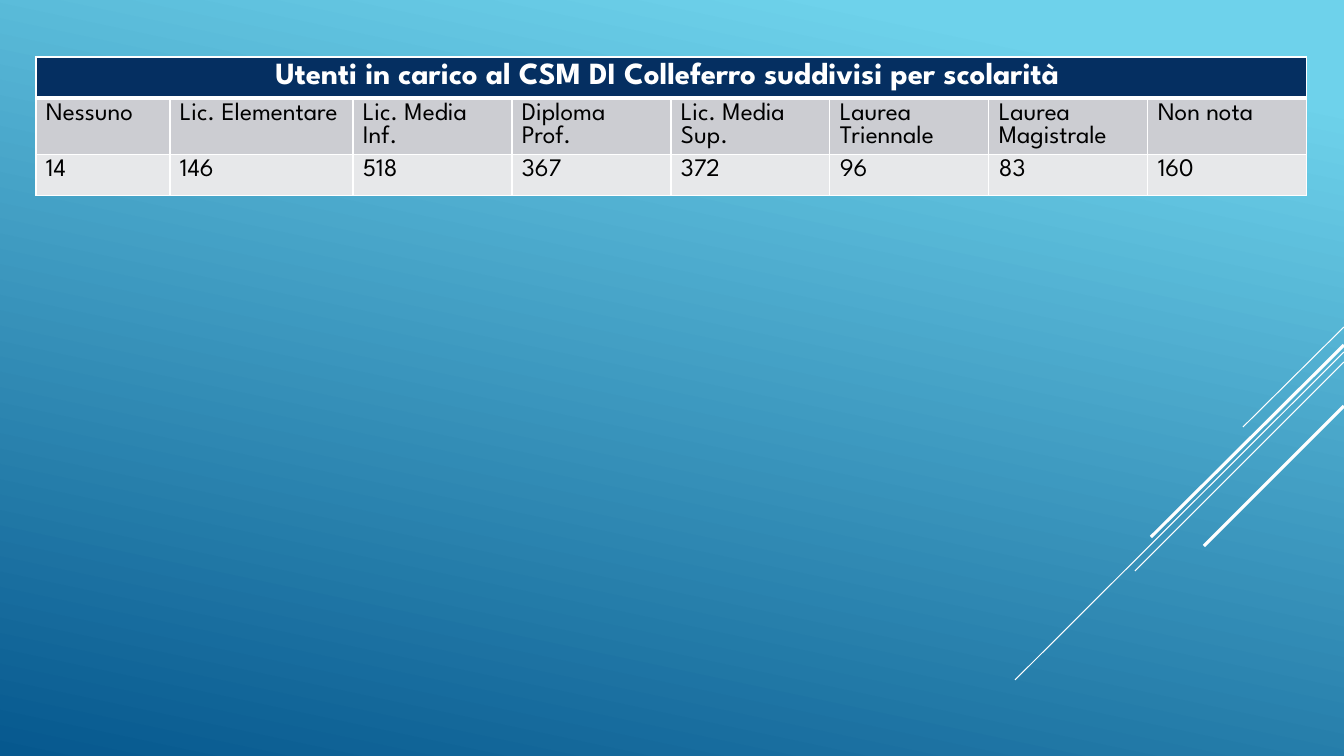
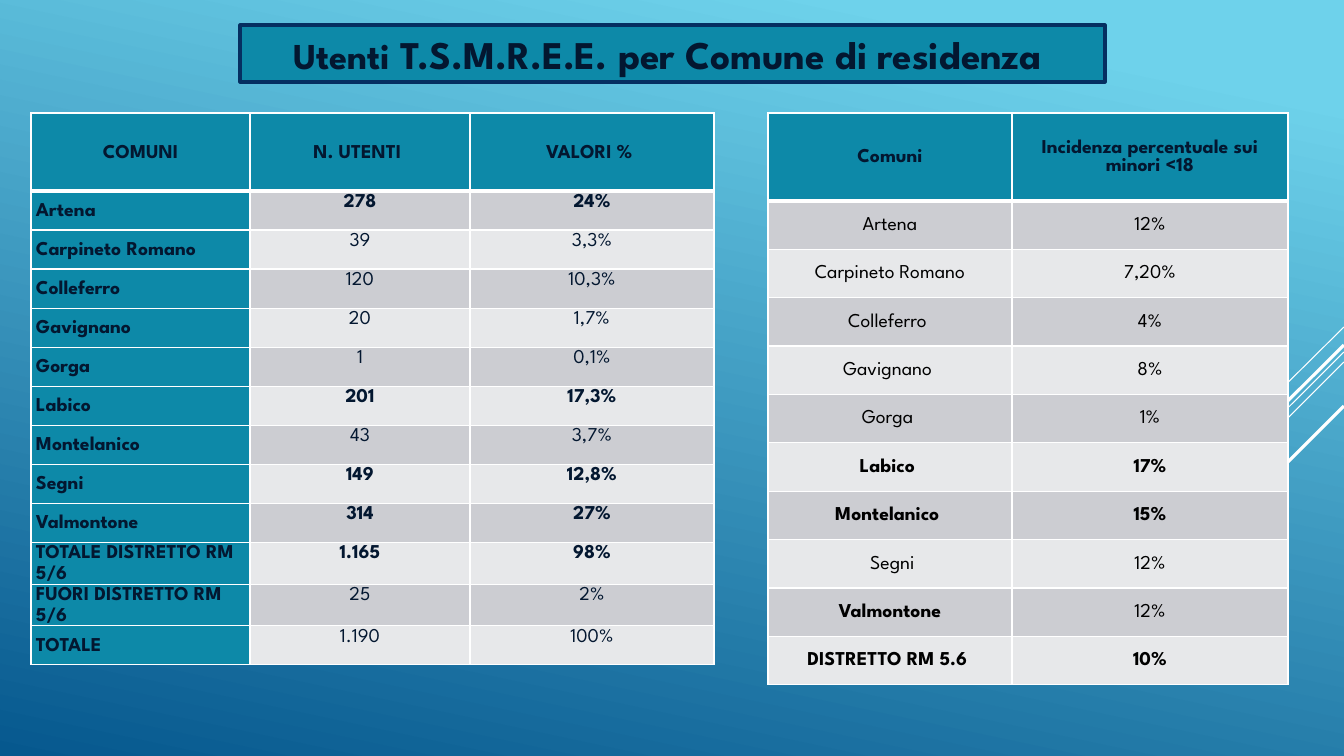
from lxml import etree
from pptx import Presentation
from pptx.dml.color import RGBColor
from pptx.enum.shapes import MSO_CONNECTOR
from pptx.enum.text import MSO_ANCHOR, MSO_AUTO_SIZE, PP_ALIGN
from pptx.oxml import parse_xml
from pptx.oxml.ns import nsdecls, qn
from pptx.util import Emu, Pt

# Shared look
SLIDE_WIDTH, SLIDE_HEIGHT = 1344, 756
FONT = "League Spartan"
WHITE, BLACK, INK = "FFFFFF", "000000", "031730"
NAVY, TEAL = "052F61", "0D89A8"
BANDS = ("CCCDD2", "E7E8EA")
GRADIENT = ((0.1, "6ED2EB"), (1, "06588E"))
GRADIENT_ANGLE = 258

# Diagonal lines from the right edge: start y, end x, end y, width in points
DIAGONALS = [
    (327, 1243, 427, 0.75),
    (352, 1015, 680, 0.75),
    (362, 1135, 571, 0.75),
    (345, 1151, 537, 2.25),
    (406, 1204, 546, 2.25),
]

# Content: a leading * marks a bold value
EDUCATION = [
    ["Utenti in carico al CSM DI Colleferro suddivisi per scolarità "] + [""] * 7,
    ["Nessuno", "Lic. Elementare", "Lic. Media Inf.", "Diploma Prof.",
     "Lic. Media Sup.", "Laurea Triennale", "Laurea Magistrale", "Non nota"],
    ["14", "146", "518", "367", "372", "96", "83", "160"],
]
USERS = [
    ("COMUNI", "N. UTENTI ", "VALORI % "),
    ("*Artena", "*278", "*24%"),
    ("*Carpineto Romano", "39", "3,3%"),
    ("*Colleferro", "120", "10,3%"),
    ("*Gavignano", "20", "1,7%"),
    ("*Gorga", "1", "0,1%"),
    ("*Labico", "*201", "*17,3%"),
    ("*Montelanico", "43", "3,7%"),
    ("*Segni", "*149", "*12,8%"),
    ("*Valmontone", "*314", "*27%"),
    ("*TOTALE DISTRETTO RM 5/6", "*1.165", "*98%"),
    ("*FUORI DISTRETTO RM 5/6", "25", "2%"),
    ("*TOTALE", "1.190", "100%"),
]
INCIDENCE = [
    ("Comuni", "Incidenza percentuale sui minori <18"),
    ("Artena", "12%"),
    ("Carpineto Romano", "7,20%"),
    ("Colleferro ", "4%"),
    ("Gavignano ", "8%"),
    ("Gorga ", "1%"),
    ("*Labico ", "*17%"),
    ("*Montelanico ", "*15%"),
    (" Segni", "12%"),
    ("*Valmontone", "12%"),
    ("*DISTRETTO RM 5.6 ", "*10%"),
]
TITLE_RUNS = [("Utenti", 26), (" T.S.M.R.E.E. per Comune di residenza ", 28)]


def px(value):
    return Emu(round(value * 12192000 / SLIDE_WIDTH))


def color(value):
    return RGBColor.from_string(value)


def style_font(font, size, ink, bold):
    font.name, font.size, font.bold = FONT, Pt(size), bold
    font.color.rgb = color(ink)


def set_borders(cell, top, bottom):
    properties = cell._tc.get_or_add_tcPr()
    for side, width in (("L", 1), ("R", 1), ("T", top), ("B", bottom)):
        properties.append(parse_xml(
            f'<a:ln{side} {nsdecls("a")} w="{Pt(width)}"><a:solidFill>'
            f'<a:srgbClr val="{WHITE}"/></a:solidFill></a:ln{side}>'))


def add_grid(slide, rows, left, top, widths, header_height, height, *, size=14,
             header_size=14, header_fill=TEAL, header_ink=INK, body_ink=BLACK,
             margins=(10, 5, 10, 5), body_align=PP_ALIGN.CENTER,
             body_anchor=MSO_ANCHOR.MIDDLE, name_column=False,
             line_spacing=None, space_after=None):
    """Table with a header row, banded body rows and white borders."""
    table = slide.shapes.add_table(len(rows), len(widths), px(left), px(top),
                                   px(sum(widths)), px(height)).table
    table.horz_banding = False
    for column, width in zip(table.columns, widths):
        column.width = px(width)
    body_height = (height - header_height) / (len(rows) - 1)
    for i, values in enumerate(rows):
        header = i == 0
        table.rows[i].height = px(header_height if header else body_height)
        for j, value in enumerate(values):
            cell = table.cell(i, j)
            name = name_column and j == 0 and not header
            set_borders(cell, 3 if i == 1 else 1, 3 if header else 1)
            cell.fill.solid()
            cell.fill.fore_color.rgb = color(
                header_fill if header else TEAL if name else BANDS[(i - 1) % 2])
            (cell.margin_left, cell.margin_top,
             cell.margin_right, cell.margin_bottom) = map(px, margins)
            cell.vertical_anchor = MSO_ANCHOR.MIDDLE if header or name else body_anchor
            paragraph = cell.text_frame.paragraphs[0]
            paragraph.text = value.removeprefix("*")
            paragraph.alignment = (PP_ALIGN.CENTER if header
                                   else PP_ALIGN.LEFT if name else body_align)
            paragraph.line_spacing = line_spacing
            paragraph.space_after = space_after
            for run in paragraph.runs:
                style_font(run.font, header_size if header else size,
                           header_ink if header else body_ink,
                           header or value.startswith("*"))
    return table


def style_master(master, slide):
    """Give the master its gradient and the diagonal lines, drawn via a slide."""
    fill = master.background.fill
    fill.gradient()
    fill.gradient_angle = GRADIENT_ANGLE
    for stop, (position, value) in zip(fill.gradient_stops, GRADIENT):
        stop.position = position
        stop.color.rgb = color(value)
    for number, (start_y, end_x, end_y, width) in enumerate(DIAGONALS):
        line = slide.shapes.add_connector(MSO_CONNECTOR.STRAIGHT, px(SLIDE_WIDTH),
                                          px(start_y), px(end_x), px(end_y))
        line.line.color.rgb = color(WHITE)
        line.line.width = Pt(width)
        etree.SubElement(line.element.spPr, qn("a:effectLst"))
        line.element.xpath(".//p:cNvPr")[0].set("id", str(100 + number))
        master.shapes.element.append(line.element)


def add_title(slide, runs, left, top, width, height):
    title = slide.shapes.title
    title.left, title.top, title.width, title.height = map(px, (left, top, width, height))
    title.fill.solid()
    title.fill.fore_color.rgb = color(TEAL)
    title.line.color.rgb = color(NAVY)
    title.line.width = Pt(2.25)
    title.text_frame.auto_size = MSO_AUTO_SIZE.NONE
    title.text_frame.vertical_anchor = MSO_ANCHOR.MIDDLE
    paragraph = title.text_frame.paragraphs[0]
    paragraph.alignment = PP_ALIGN.CENTER
    for text, size in runs:
        run = paragraph.add_run()
        run.text = text
        style_font(run.font, size, INK, True)


def main():
    presentation = Presentation()
    presentation.slide_width, presentation.slide_height = px(SLIDE_WIDTH), px(SLIDE_HEIGHT)
    title_only, blank = presentation.slide_layouts[5], presentation.slide_layouts[6]

    # Users by education
    slide = presentation.slides.add_slide(blank)
    style_master(presentation.slide_master, slide)
    table = add_grid(slide, EDUCATION, 36, 57, [134, 183] + [159] * 6, 41, 123,
                     size=18, header_size=22, header_fill=NAVY, header_ink=WHITE,
                     body_align=PP_ALIGN.LEFT, body_anchor=MSO_ANCHOR.TOP)
    table.cell(0, 0).merge(table.cell(0, len(EDUCATION[0]) - 1))

    # Users by town of residence
    slide = presentation.slides.add_slide(title_only)
    add_title(slide, TITLE_RUNS, 240, 25, 865, 57)
    add_grid(slide, USERS, 31, 113, [219, 220, 244], 78, 547, body_ink=INK,
             margins=(5, 0, 5, 0), body_anchor=MSO_ANCHOR.TOP, name_column=True,
             line_spacing=1.15, space_after=Pt(10))
    add_grid(slide, INCIDENCE, 768, 113, [244, 276], 88, 572, margins=(1, 1, 1, 0))

    presentation.save("out.pptx")


if __name__ == "__main__":
    main()
